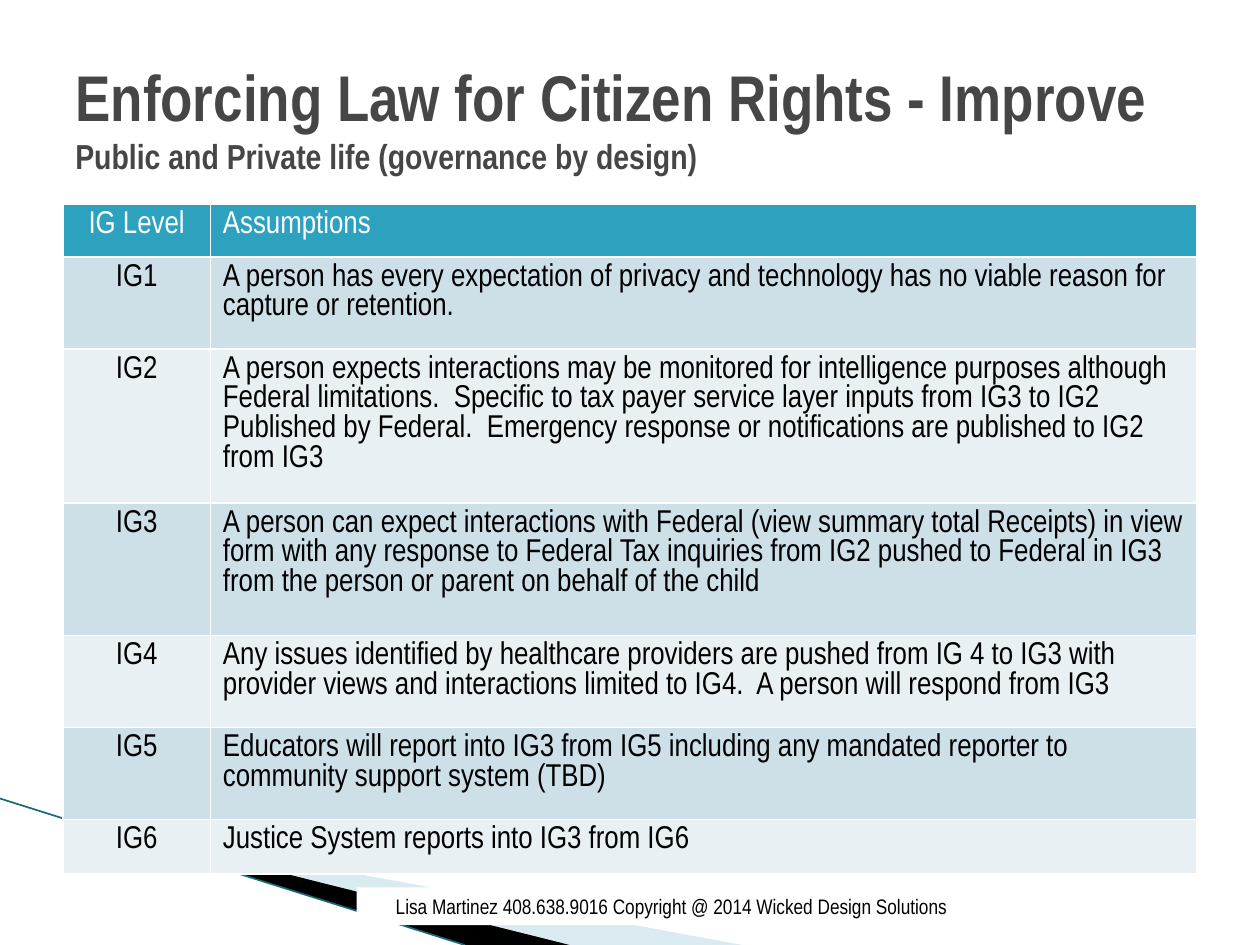
from lxml.etree import SubElement
from pptx import Presentation
from pptx.dml.color import RGBColor as Rgb
from pptx.enum.shapes import MSO_CONNECTOR as Conn, MSO_SHAPE as Shape
from pptx.enum.text import MSO_ANCHOR as Anchor, PP_ALIGN as Align
from pptx.oxml.ns import qn
from pptx.util import Inches, Pt

WIDE, HIGH = Inches(10), Inches(7.5)
FONT = "Arial Narrow"
HUES = {
    "white": "FFFFFF", "black": "000000", "title": "464646",
    "head": "2DA2BF", "odd": "CDE0E8", "even": "E8F0F4",
    "wedge": "A0CBDC", "line": "16697A",
}
ROWS = [
    ("IG Level", "Assumptions"),
    ("IG1", "A person has every expectation of privacy and technology has no "
            "viable reason for capture or retention."),
    ("IG2", "A person expects interactions may be monitored for intelligence "
            "purposes although Federal limitations.  Specific to tax payer "
            "service layer inputs from IG3 to IG2 Published by Federal.  "
            "Emergency response or notifications are published to IG2 from IG3"),
    ("IG3", "A person can expect interactions with Federal (view summary total "
            "Receipts) in view form with any response to Federal Tax inquiries "
            "from IG2 pushed to Federal in IG3 from the person or parent on "
            "behalf of the child"),
    ("IG4", "Any issues identified by healthcare providers are pushed from IG 4 "
            "to IG3 with provider views and interactions limited to IG4.  "
            "A person will respond from IG3"),
    ("IG5", "Educators will report into IG3 from IG5 including any mandated "
            "reporter to community support system (TBD)"),
    ("IG6", "Justice System reports into IG3 from IG6"),
]
TALL = [0.42, 0.73, 1.22, 1.05, 0.73, 0.73, 0.43]  # row heights in inches


def area(x, y, w, h):
    """Turn shares of the slide into a box of lengths."""
    return int(x * WIDE), int(y * HIGH), int(w * WIDE), int(h * HIGH)


def hue(name):
    return Rgb.from_string(HUES[name])


def paint(part, name):
    part.fill.solid()
    part.fill.fore_color.rgb = hue(name)


def write(para, text, size=18, color="black", bold=False, align=Align.LEFT):
    para.alignment = align
    run = para.add_run()
    run.text = text
    run.font.name, run.font.size, run.font.bold = FONT, Pt(size), bold
    run.font.color.rgb = hue(color)


def wedge(slide, box, points, color, alpha=100):
    x, y, w, h = box
    spots = [(x + int(w * a), y + int(h * b)) for a, b in points]
    pen = slide.shapes.build_freeform(*spots[0], scale=1.0)
    pen.add_line_segments(spots[1:], close=True)
    part = pen.convert_to_shape()
    part.shadow.inherit = False
    paint(part, color)
    part.line.fill.background()
    if alpha < 100:
        tint = part.fill._xPr.find(".//" + qn("a:srgbClr"))
        SubElement(tint, qn("a:alpha")).set("val", str(alpha * 1000))


def swoosh(slide, box):
    x, y, w, h = box
    # Pale and black bands that fan out to the lower edge
    wedge(slide, box, [(0.09, 0.15), (0.99, 1), (0.76, 1)], "wedge", 40)
    wedge(slide, box, [(0.09, 0.14), (0.76, 1), (0.62, 1)], "black")
    # Thin line under the bands
    line = slide.shapes.add_connector(
        Conn.STRAIGHT, x, y, x + int(w * 0.62), y + h)
    line.line.color.rgb = hue("line")
    line.line.width = Pt(0.95)
    SubElement(line._element.spPr, qn("a:effectLst"))


def edge(cell):
    props = cell._tc.get_or_add_tcPr()
    for at, side in enumerate(("lnL", "lnR", "lnT", "lnB")):
        line = SubElement(props, qn("a:" + side), w=str(Pt(1)))
        props.insert(at, line)
        fill = SubElement(line, qn("a:solidFill"))
        SubElement(fill, qn("a:srgbClr"), val=HUES["white"])


def levels(slide, box):
    x, y, w, h = box
    table = slide.shapes.add_table(len(ROWS), 2, x, y, w, h).table
    for col, share in zip(table.columns, (0.13, 0.87)):
        col.width = int(w * share)
    for r, texts in enumerate(ROWS):
        table.rows[r].height = int(h * TALL[r] / sum(TALL))
        back = "odd" if r % 2 else "even"
        for c, text in enumerate(texts):
            cell = table.cell(r, c)
            paint(cell, back if r else "head")
            edge(cell)
            write(cell.text_frame.paragraphs[0], text,
                  color="black" if r else "white",
                  align=Align.LEFT if c else Align.CENTER)


def title(slide, box):
    frame = slide.shapes.add_textbox(*box).text_frame
    frame.word_wrap = True
    frame.vertical_anchor = Anchor.MIDDLE
    para = frame.paragraphs[0]
    write(para, "Enforcing Law for Citizen Rights - Improve", size=36.9,
          color="title", bold=True)
    para.add_line_break()
    write(para, "Public and Private life (governance by design)", size=19.8,
          color="title", bold=True)


def footer(slide, box):
    part = slide.shapes.add_shape(Shape.RECTANGLE, *box)
    part.shadow.inherit = False
    paint(part, "white")
    part.line.fill.background()
    frame = part.text_frame
    frame.word_wrap = True
    frame.vertical_anchor = Anchor.MIDDLE
    write(frame.paragraphs[0],
          "Lisa Martinez 408.638.9016 Copyright @ 2014 Wicked Design Solutions",
          size=12, align=Align.CENTER)


def main():
    deck = Presentation()
    deck.slide_width, deck.slide_height = WIDE, HIGH
    slide = deck.slides.add_slide(deck.slide_layouts[6])
    swoosh(slide, area(0, 0.845, 0.595, 0.155))
    levels(slide, area(0.05, 0.216, 0.9, 0.709))
    title(slide, area(0.05, 0.04, 0.9, 0.167))
    footer(slide, area(0.283, 0.939, 0.5, 0.04))
    deck.save("out.pptx")


if __name__ == "__main__":
    main()
